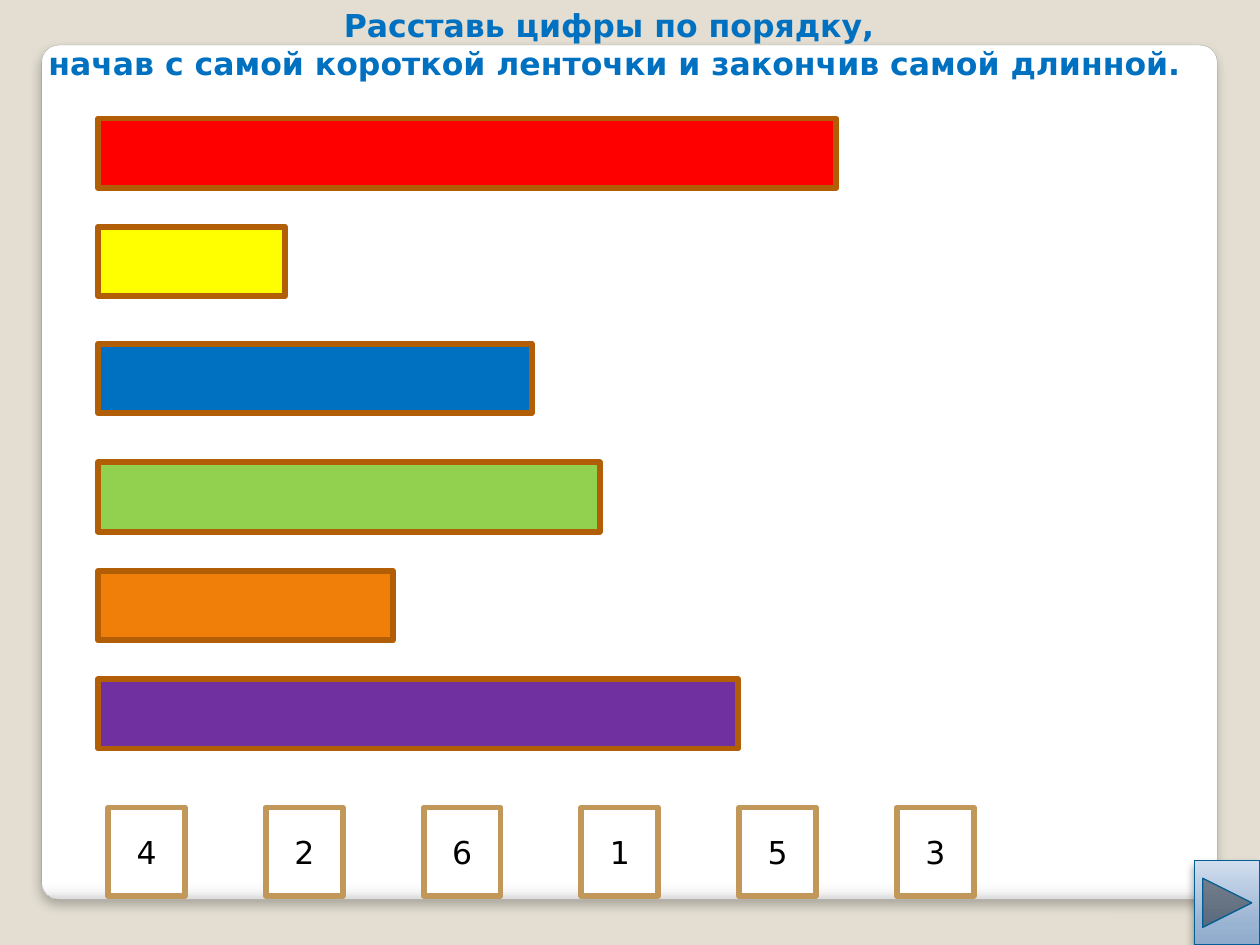
from lxml import etree
from pptx import Presentation
from pptx.dml.color import RGBColor
from pptx.enum.shapes import MSO_SHAPE
from pptx.enum.text import MSO_ANCHOR, MSO_AUTO_SIZE, PP_ALIGN
from pptx.oxml.ns import qn
from pptx.util import Cm, Pt

RECT = MSO_SHAPE.RECTANGLE
ROUNDED = MSO_SHAPE.ROUNDED_RECTANGLE
NEXT_BUTTON = MSO_SHAPE.ACTION_BUTTON_FORWARD_OR_NEXT
TOP, MIDDLE = MSO_ANCHOR.TOP, MSO_ANCHOR.MIDDLE
CENTER = PP_ALIGN.CENTER
FONT = "DejaVu Sans"
TITLE_ONLY = 5

TITLE = ["Расставь цифры по порядку, ",
         "начав с самой короткой ленточки и закончив самой длинной."]
# colour, top and length in cm
RIBBONS = [
    ("FF0000", 2.39, 14.88),
    ("FFFF00", 4.57, 3.76),
    ("0070C0", 6.93, 8.74),
    ("92D050", 9.32, 10.11),
    ("F07F09", 11.51, 5.94),
    ("7030A0", 13.69, 12.9),
]
DIGITS = "426153"


def rgb(color):
    return RGBColor.from_string(color)


def add_color(parent, color, alpha=100):
    clr = etree.SubElement(parent, qn("a:srgbClr"), val=color)
    if alpha < 100:
        etree.SubElement(clr, qn("a:alpha"), val=str(alpha * 1000))


def set_text(tf, lines, size=18, color="000000", bold=False, anchor=MIDDLE, wrap=True):
    tf.word_wrap = wrap
    tf.vertical_anchor = anchor
    for i, line in enumerate(lines):
        p = tf.paragraphs[0] if i == 0 else tf.add_paragraph()
        p.alignment = CENTER
        r = p.add_run()
        r.text = line
        r.font.name = FONT
        r.font.size = Pt(size)
        r.font.bold = bold
        r.font.color.rgb = rgb(color)


def add_box(s, kind, left, top, width, height, line, weight, fill=None):
    sp = s.shapes.add_shape(kind, Cm(left), Cm(top), Cm(width), Cm(height))
    sp.shadow.inherit = False
    sp.line.color.rgb = rgb(line)
    sp.line.width = Pt(weight)
    if fill:
        sp.fill.solid()
        sp.fill.fore_color.rgb = rgb(fill)
    return sp


def set_gradient(sp, stops, angle):
    """Fill with (percent, colour) stops; the angle runs clockwise in degrees."""
    grad = etree.Element(qn("a:gradFill"), rotWithShape="1")
    stop_list = etree.SubElement(grad, qn("a:gsLst"))
    for percent, color in stops:
        add_color(etree.SubElement(stop_list, qn("a:gs"), pos=str(percent * 1000)), color)
    etree.SubElement(grad, qn("a:lin"), ang=str(angle * 60000), scaled="0")
    sp.element.spPr.find(qn("a:prstGeom")).addnext(grad)


def set_shadow(sp, alpha, blur, distance):
    """Drop a black shadow straight down; blur and distance are in points."""
    effects = sp.element.spPr.find(qn("a:effectLst"))
    shadow = etree.SubElement(effects, qn("a:outerShdw"), blurRad=str(Pt(blur)),
                              dist=str(Pt(distance)), dir="5400000",
                              algn="t", rotWithShape="0")
    add_color(shadow, "000000", alpha)


def add_panel(s):
    sp = add_box(s, ROUNDED, 0.84, 0.91, 23.7, 17.22, "A4A4A4", 0.16)
    sp.adjustments[0] = 0.02
    set_gradient(sp, [(0, "FFFFFF"), (98, "FFFFFF"), (99, "F7F7F7"), (100, "DADADA")], 90)
    set_shadow(sp, 25, 6, 4)
    return sp


def add_title(s, panel):
    sp = s.shapes.title
    sp.left, sp.top, sp.width, sp.height = Cm(0.58), Cm(0), Cm(23.62), Cm(1.8)
    set_text(sp.text_frame, TITLE, color="0070C0", bold=True, anchor=TOP, wrap=False)
    sp.text_frame.auto_size = MSO_AUTO_SIZE.SHAPE_TO_FIT_TEXT
    panel.element.addnext(sp.element)  # title lies over the panel


def add_next_button(s):
    sp = add_box(s, NEXT_BUTTON, 24.08, 17.35, 1.32, 1.7, "035E94", 0.75)
    set_gradient(sp, [(0, "90ABCB"), (25, "99B3D2"), (100, "D1DEEE")], 270)
    set_shadow(sp, 40, 5.2, 3)


def main():
    prs = Presentation()
    prs.slide_width, prs.slide_height = Cm(25.4), Cm(19.05)
    s = prs.slides.add_slide(prs.slide_layouts[TITLE_ONLY])
    s.background.fill.solid()
    s.background.fill.fore_color.rgb = rgb("E3DED1")

    add_title(s, add_panel(s))
    for color, top, length in RIBBONS:
        add_box(s, RECT, 1.98, top, length, 1.4, "B25E07", 3.35, color)
    for i, digit in enumerate(DIGITS):
        sp = add_box(s, RECT, 2.18 + 3.18 * i, 16.28, 1.55, 1.78, "C19859", 3.35, "FFFFFF")
        set_text(sp.text_frame, [digit])
    add_next_button(s)
    prs.save("out.pptx")


if __name__ == "__main__":
    main()
